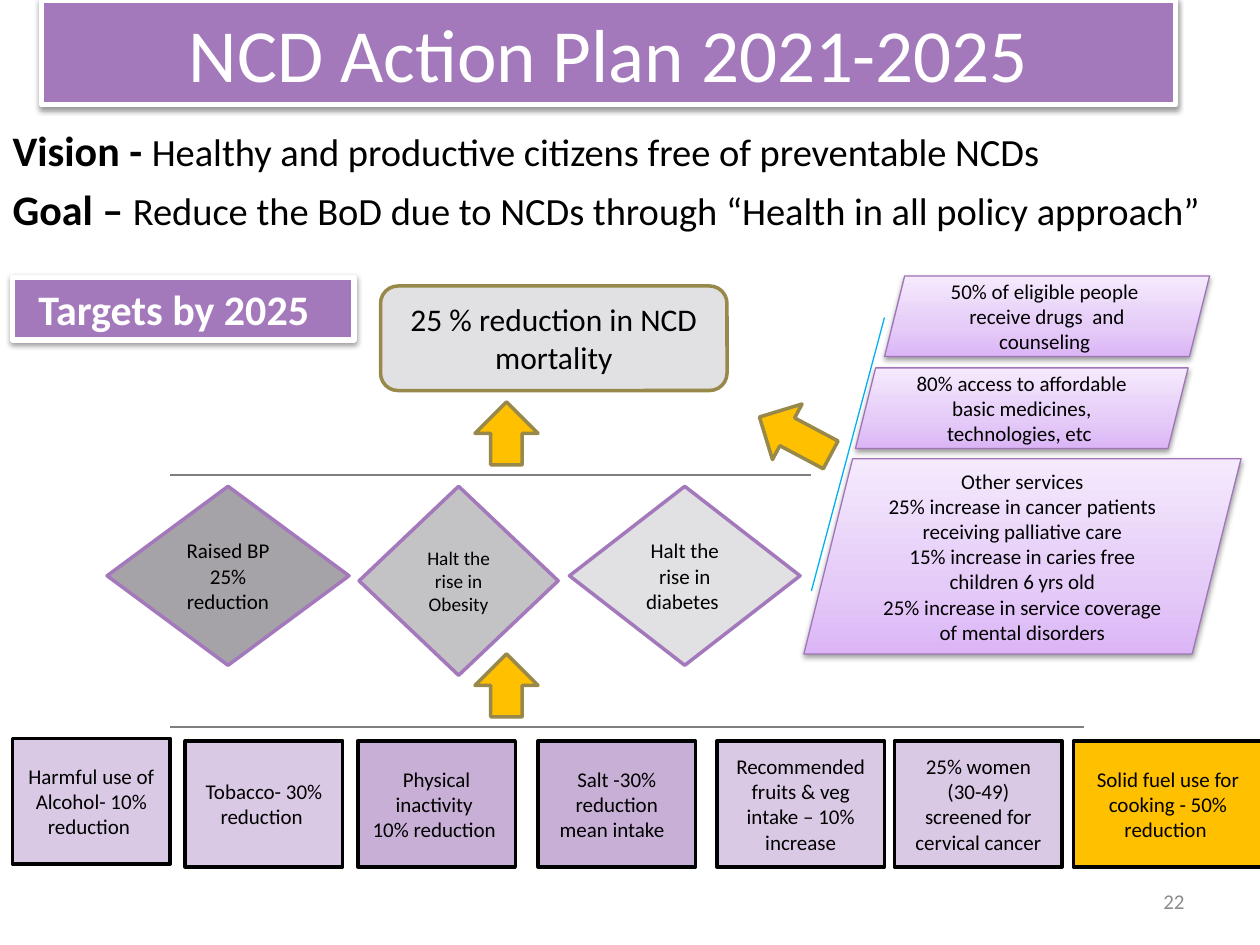
from dataclasses import dataclass

from lxml.etree import SubElement
from pptx import Presentation
from pptx.dml.color import RGBColor
from pptx.enum.shapes import MSO_CONNECTOR, MSO_SHAPE
from pptx.enum.text import MSO_ANCHOR, MSO_AUTO_SIZE, PP_ALIGN
from pptx.oxml.ns import qn
from pptx.util import Inches, Pt


@dataclass(frozen=True)
class Theme:
    font: str = "Calibri"
    black: str = "000000"
    white: str = "FFFFFF"
    purple: str = "A379BB"
    lilac: str = "DAC9E4"
    mauve: str = "C8AFD6"
    light_gray: str = "E1E0E2"
    mid_gray: str = "C3C2C5"
    dark_gray: str = "A5A3A8"
    number_gray: str = "8C8C8C"
    rule_gray: str = "7F7F7F"
    amber: str = "FFC000"
    olive: str = "98894B"
    blue: str = "00B0F0"
    service_edge: str = "A075B8"
    service_stops: tuple = ((0, "DBB5F6"), (35, "E5CBF8"), (100, "F5EAFD"))
    title: float = 42.9
    heading: float = 24
    statement: float = 22
    outcome: float = 18
    label: float = 12
    small: float = 11


THEME = Theme()


def apply(target, values):
    for name, value in values.items():
        setattr(target, name, value)


def place(box, left, top, width, height):
    apply(box, {"left": Inches(left), "top": Inches(top),
                "width": Inches(width), "height": Inches(height)})


def add_span(para, text, size, color=THEME.black, bold=False):
    span = para.add_run()
    span.text = text
    apply(span.font, {"name": THEME.font, "size": Pt(size), "bold": bold})
    span.font.color.rgb = RGBColor.from_string(color)


def write(box, lines, size, color=THEME.black, bold=False,
          align=PP_ALIGN.CENTER, anchor=MSO_ANCHOR.MIDDLE):
    frame = box.text_frame
    apply(frame, {"word_wrap": True, "auto_size": MSO_AUTO_SIZE.NONE,
                  "vertical_anchor": anchor})
    for index, line in enumerate(lines):
        para = frame.add_paragraph() if index else frame.paragraphs[0]
        para.alignment = align
        add_span(para, line, size, color, bold)


def paint(box, fill, edge, weight):
    box.shadow.inherit = False
    box.fill.solid()
    box.fill.fore_color.rgb = RGBColor.from_string(fill)
    box.line.color.rgb = RGBColor.from_string(edge)
    box.line.width = Pt(weight)


def add_color(parent, color):
    return SubElement(parent, qn("a:srgbClr"), val=color)


def cast_shadow(box):
    effects = box._element.spPr.find(qn("a:effectLst"))
    shadow = SubElement(effects, qn("a:outerShdw"), blurRad="40000",
                        dist="20000", dir="5400000", rotWithShape="0")
    SubElement(add_color(shadow, THEME.black), qn("a:alpha"), val="38000")


def shade(box, stops):
    box.fill.gradient()
    box.fill.gradient_angle = 90
    stop_list = box._element.spPr.find(qn("a:gradFill")).find(qn("a:gsLst"))
    for stop in list(stop_list):
        stop_list.remove(stop)
    for percent, color in stops:
        add_color(SubElement(stop_list, qn("a:gs"), pos=str(percent * 1000)), color)


def add_box(page, kind, bounds, fill, edge, weight=2):
    box = page.shapes.add_shape(kind, *map(Inches, bounds))
    paint(box, fill, edge, weight)
    return box


def add_service(page, bounds, lines):
    box = add_box(page, MSO_SHAPE.PARALLELOGRAM, bounds, THEME.lilac,
                  THEME.service_edge, 0.75)
    shade(box, THEME.service_stops)
    cast_shadow(box)
    write(box, lines, THEME.label)


def add_rule(page, start, end, color):
    rule = page.shapes.add_connector(MSO_CONNECTOR.STRAIGHT, *map(Inches, start + end))
    rule.line.color.rgb = RGBColor.from_string(color)
    rule.line.width = Pt(0.75)
    SubElement(rule._element.spPr, qn("a:effectLst"))


def add_arrow(page, bounds, rotation=0):
    arrow = add_box(page, MSO_SHAPE.UP_ARROW, bounds, THEME.amber, THEME.olive)
    arrow.rotation = rotation


def add_title(page):
    title = page.shapes.title
    place(title, 0.33, 0, 9, 0.83)
    paint(title, THEME.purple, THEME.white, 3)
    cast_shadow(title)
    write(title, ["NCD Action Plan 2021-2025"], THEME.title, THEME.white)


def add_statements(page):
    body = page.placeholders[1]
    place(body, 0, 0.94, 9.92, 0.98)
    frame = body.text_frame
    frame.auto_size = MSO_AUTO_SIZE.NONE
    statements = [
        ("Vision - ", "Healthy and productive citizens free of preventable NCDs"),
        ("Goal – ", "Reduce the BoD due to NCDs through “Health in all policy approach”"),
    ]
    for index, (name, statement) in enumerate(statements):
        para = frame.add_paragraph() if index else frame.paragraphs[0]
        settings = para._p.get_or_add_pPr()
        settings.set("marL", "0")
        settings.set("indent", "0")
        SubElement(settings, qn("a:buNone"))
        add_span(para, name, THEME.heading, bold=True)
        add_span(para, statement, THEME.statement)


def add_risk_factors(page):
    factors = [
        (0.1, 5.86, 1.25, THEME.lilac, ["Harmful use of Alcohol- 10% reduction "]),
        (1.47, 5.88, 1.25, THEME.lilac, ["Tobacco- 30% reduction "]),
        (2.84, 5.88, 1.25, THEME.mauve, ["Physical inactivity ", "10% reduction "]),
        (4.27, 5.88, 1.25, THEME.mauve, ["Salt -30% reduction mean intake  "]),
        (5.69, 5.88, 1.33, THEME.lilac, ["Recommended fruits & veg intake – 10% increase"]),
        (7.1, 5.88, 1.33, THEME.lilac, ["25% women (30-49) screened for cervical cancer"]),
        (8.52, 5.88, 1.5, THEME.amber, ["Solid fuel use for cooking - 50% reduction "]),
    ]
    for left, top, width, fill, lines in factors:
        box = add_box(page, MSO_SHAPE.RECTANGLE, (left, top, width, 1), fill, THEME.black)
        write(box, lines, THEME.label)


def add_conditions(page):
    conditions = [
        (0.85, 1.92, 1.42, THEME.dark_gray, THEME.label, "Raised BP 25% reduction"),
        (2.85, 1.58, 1.5, THEME.mid_gray, THEME.small, "Halt the rise in Obesity"),
        (4.52, 1.83, 1.42, THEME.light_gray, THEME.label, "Halt the rise in diabetes "),
    ]
    for left, width, height, fill, size, text in conditions:
        box = add_box(page, MSO_SHAPE.DIAMOND, (left, 3.86, width, height),
                      fill, THEME.purple)
        write(box, [text], size)


def add_services(page):
    add_service(page, (7.02, 2.19, 2.58, 0.64),
                ["50% of eligible people  receive drugs  and counseling "])
    add_service(page, (6.79, 2.92, 2.64, 0.64),
                ["80% access to affordable basic medicines, technologies, etc "])
    add_service(page, (6.38, 3.64, 3.47, 1.55), [
        "Other services",
        "25% increase in cancer patients receiving palliative care",
        "15% increase in caries free children 6 yrs old",
        "25% increase in service coverage of mental disorders",
    ])


def main():
    deck = Presentation()
    apply(deck, {"slide_width": Inches(10), "slide_height": Inches(7.5)})
    page = deck.slides.add_slide(deck.slide_layouts[1])
    add_title(page)
    add_statements(page)

    number = page.shapes.add_textbox(*map(Inches, (7.17, 6.95, 2.33, 0.4)))
    write(number, ["22"], THEME.label, THEME.number_gray, align=PP_ALIGN.RIGHT)

    outcome = add_box(page, MSO_SHAPE.ROUNDED_RECTANGLE, (3.02, 2.27, 2.75, 0.83),
                      THEME.light_gray, THEME.olive)
    write(outcome, ["25 % reduction in NCD mortality"], THEME.outcome)

    add_risk_factors(page)
    add_conditions(page)
    add_rule(page, (1.35, 3.77), (6.44, 3.77), THEME.rule_gray)
    add_rule(page, (1.35, 5.77), (8.6, 5.77), THEME.rule_gray)
    add_rule(page, (6.44, 4.69), (7.02, 2.52), THEME.blue)
    add_arrow(page, (3.77, 3.19, 0.5, 0.5))
    add_arrow(page, (3.77, 5.19, 0.5, 0.5))
    add_arrow(page, (6.06, 3.14, 0.5, 0.64), 298)
    add_services(page)

    targets = add_box(page, MSO_SHAPE.RECTANGLE, (0.1, 2.2, 2.71, 0.5),
                      THEME.purple, THEME.white, 3)
    cast_shadow(targets)
    write(targets, ["Targets by 2025  "], THEME.heading, THEME.white, True,
          anchor=MSO_ANCHOR.TOP)
    deck.save("out.pptx")


if __name__ == "__main__":
    main()
